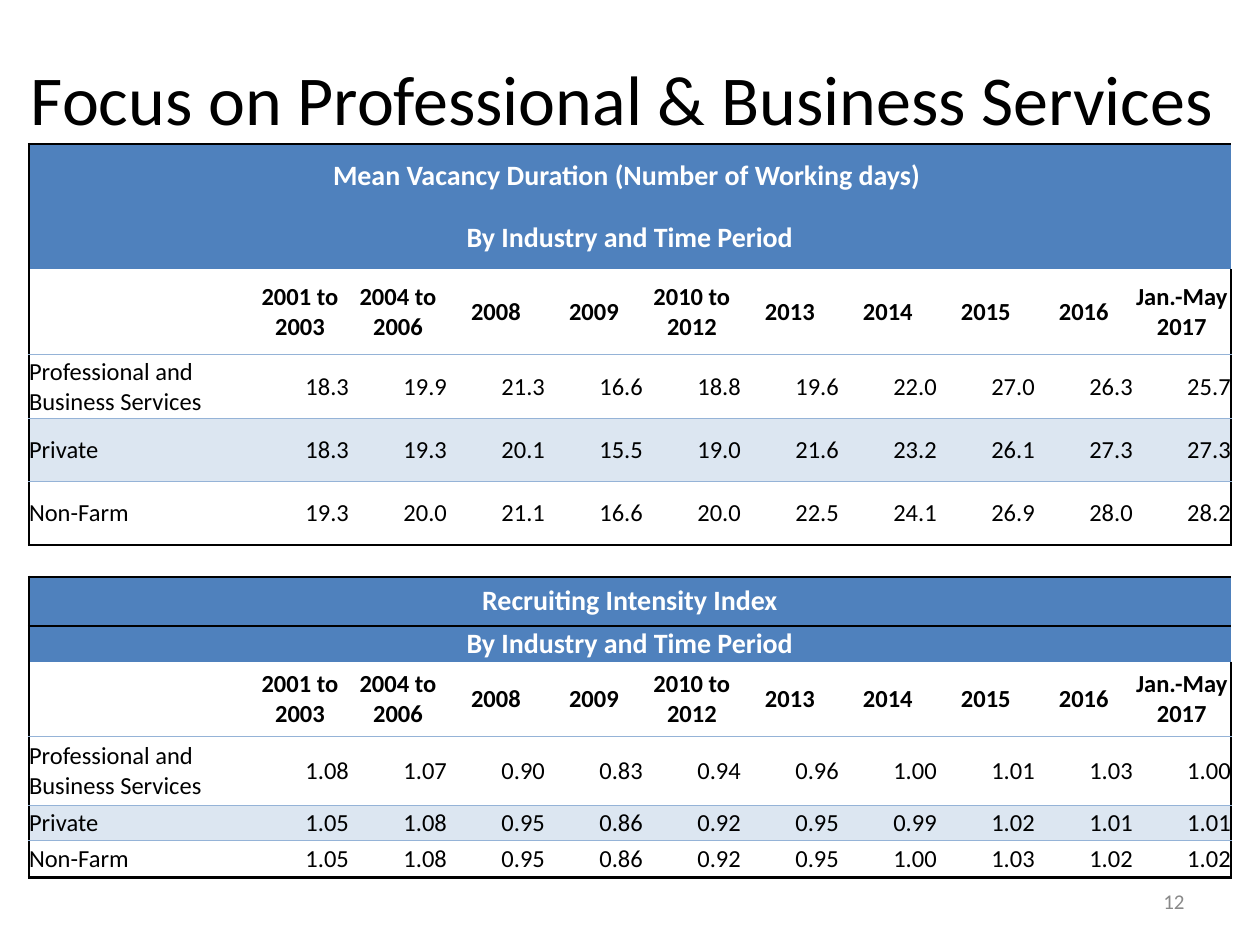
import pptx
import pptx.dml.color
import pptx.enum.text
import pptx.oxml
import pptx.oxml.ns
import pptx.util

EMU_PER_PX = 914400 // 126
FONT = "Calibri"
COLORS = {
    "black": "000000", "white": "FFFFFF", "gray": "898989",
    "header": "4F81BD", "band": "DCE6F1", "rule": "95B3D7",
}
NO_STYLE_NO_GRID = "{2D5ABB26-0587-4C30-8999-92F81FD0307C}"
FRAME = ("black", 1.5)
RULE = ("rule", 0.5)
LEFT = pptx.enum.text.PP_ALIGN.LEFT
CENTER = pptx.enum.text.PP_ALIGN.CENTER
RIGHT = pptx.enum.text.PP_ALIGN.RIGHT
MIDDLE = pptx.enum.text.MSO_ANCHOR.MIDDLE

PERIODS = ["2001 to 2003", "2004 to 2006", "2008", "2009", "2010 to 2012",
           "2013", "2014", "2015", "2016", "Jan.-May 2017"]
INDUSTRIES = ["Professional and Business Services", "Private", "Non-Farm"]
SUBTITLE = "By Industry and Time Period"
SECTIONS = [
    ("Mean Vacancy Duration (Number of Working days) ", [
        "18.3 19.9 21.3 16.6 18.8 19.6 22.0 27.0 26.3 25.7",
        "18.3 19.3 20.1 15.5 19.0 21.6 23.2 26.1 27.3 27.3",
        "19.3 20.0 21.1 16.6 20.0 22.5 24.1 26.9 28.0 28.2",
    ]),
    ("Recruiting Intensity Index", [
        "1.08 1.07 0.90 0.83 0.94 0.96 1.00 1.01 1.03 1.00",
        "1.05 1.08 0.95 0.86 0.92 0.95 0.99 1.02 1.01 1.01",
        "1.05 1.08 0.95 0.86 0.92 0.95 1.00 1.03 1.02 1.02",
    ]),
]
SECTION_ROWS = 6
SPACER_ROW = SECTION_ROWS
COLUMN_WIDTHS = [222] + [98] * len(PERIODS)
ROW_HEIGHTS = [63, 62, 86, 64, 63, 63, 32, 49, 36, 75, 69, 35, 37]


def px(length):
    return pptx.util.Emu(length * EMU_PER_PX)


def rgb(color):
    return pptx.dml.color.RGBColor.from_string(COLORS[color])


def place(shape, left, top, width, height):
    shape.left, shape.top = px(left), px(top)
    shape.width, shape.height = px(width), px(height)


def write(text_frame, text, size, color, alignment, bold=False):
    text_frame.text = text
    paragraph = text_frame.paragraphs[0]
    paragraph.alignment = alignment
    for run in paragraph.runs:
        run.font.name = FONT
        run.font.size = pptx.util.Pt(size)
        run.font.bold = bold
        run.font.color.rgb = rgb(color)


def shrink_empty_cell(cell):
    """Keep the default text size from stretching the row of a blank cell."""
    paragraph = cell.text_frame.paragraphs[0]
    end = pptx.oxml.parse_xml(
        f'<a:endParaRPr {pptx.oxml.ns.nsdecls("a")} sz="1200"/>')
    paragraph._p.append(end)


def draw_borders(cell, left, right, top, bottom):
    properties = cell._tc.get_or_add_tcPr()
    sides = {"lnL": left, "lnR": right, "lnT": top, "lnB": bottom}
    for tag, border in sides.items():
        if border:
            color, points = border
            properties.append(pptx.oxml.parse_xml(
                f'<a:{tag} {pptx.oxml.ns.nsdecls("a")} w="{pptx.util.Pt(points)}">'
                f'<a:solidFill><a:srgbClr val="{COLORS[color]}"/></a:solidFill>'
                f'</a:{tag}>'))


def format_cell(cell, row, column):
    cell.margin_left = cell.margin_right = 0
    cell.margin_top = cell.margin_bottom = 0
    cell.vertical_anchor = MIDDLE
    if row == SPACER_ROW:
        draw_borders(cell, None, None, FRAME, FRAME)
        cell.fill.background()
        return
    section_row = row % (SECTION_ROWS + 1)
    tops = [FRAME, None, None, RULE, RULE, RULE]
    bottoms = [None, None, RULE, RULE, RULE, FRAME]
    draw_borders(cell,
                 FRAME if column == 0 else None,
                 FRAME if column == len(PERIODS) else None,
                 tops[section_row], bottoms[section_row])
    fill = {0: "header", 1: "header", 4: "band"}.get(section_row)
    if fill:
        cell.fill.solid()
        cell.fill.fore_color.rgb = rgb(fill)
    else:
        cell.fill.background()


def fill_section(table, first_row, heading, value_rows):
    last_column = len(PERIODS)
    for row, text in enumerate([heading, SUBTITLE], first_row):
        table.cell(row, 0).merge(table.cell(row, last_column))
        write(table.cell(row, 0).text_frame, text, 16, "white", CENTER, True)
    for column, period in enumerate(PERIODS, 1):
        write(table.cell(first_row + 2, column).text_frame,
              period, 14, "black", CENTER, True)
    for row, (industry, values) in enumerate(zip(INDUSTRIES, value_rows), first_row + 3):
        write(table.cell(row, 0).text_frame, industry, 14, "black", LEFT)
        for column, value in enumerate(values.split(), 1):
            write(table.cell(row, column).text_frame, value, 14, "black", RIGHT)


def add_industry_table(slide):
    frame = slide.shapes.add_table(
        len(ROW_HEIGHTS), len(COLUMN_WIDTHS), px(29), px(144),
        px(sum(COLUMN_WIDTHS)), px(sum(ROW_HEIGHTS)))
    table = frame.table
    table.first_row = table.horz_banding = False
    style = table._tbl.tblPr.find(pptx.oxml.ns.qn("a:tableStyleId"))
    style.text = NO_STYLE_NO_GRID
    for column, width in zip(table.columns, COLUMN_WIDTHS):
        column.width = px(width)
    for row, height in zip(table.rows, ROW_HEIGHTS):
        row.height = px(height)
    for index, (heading, value_rows) in enumerate(SECTIONS):
        fill_section(table, index * (SECTION_ROWS + 1), heading, value_rows)
    for row in range(len(ROW_HEIGHTS)):
        for column in range(len(COLUMN_WIDTHS)):
            cell = table.cell(row, column)
            format_cell(cell, row, column)
            if not cell.text_frame.text:
                shrink_empty_cell(cell)


def add_title(slide):
    title = slide.shapes.title
    place(title, 0, 50, 1260, 95)
    title.text_frame.vertical_anchor = MIDDLE
    write(title.text_frame, "Focus on Professional & Business Services ",
          40, "black", CENTER)


def add_page_number(slide):
    box = slide.shapes.add_textbox(px(903), px(876), px(294), px(50))
    box.text_frame.word_wrap = True
    box.text_frame.vertical_anchor = MIDDLE
    write(box.text_frame, "12", 12, "gray", RIGHT)


def main():
    presentation = pptx.Presentation()
    presentation.slide_width, presentation.slide_height = px(1260), px(945)
    slide = presentation.slides.add_slide(presentation.slide_layouts[5])
    add_title(slide)
    add_page_number(slide)
    add_industry_table(slide)
    presentation.save("out.pptx")


if __name__ == "__main__":
    main()
